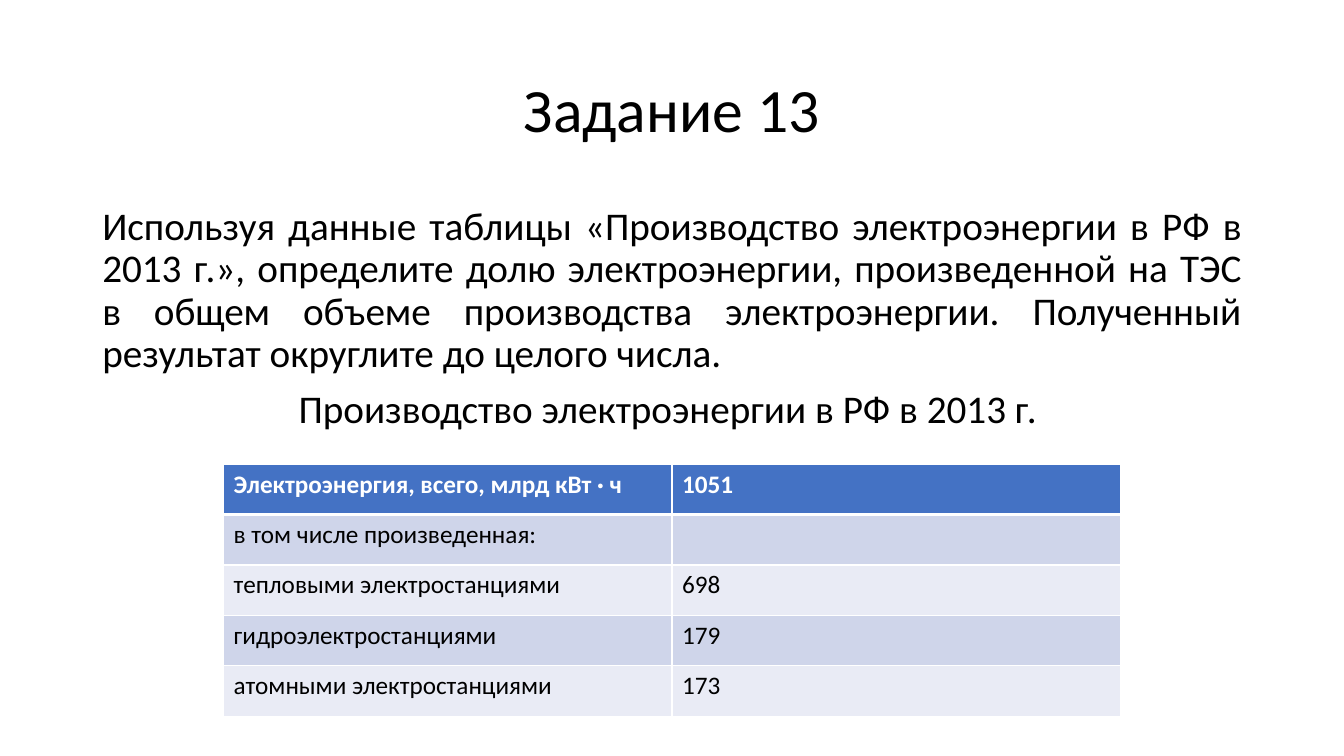
from dataclasses import dataclass

from lxml.etree import SubElement
from pptx import Presentation
from pptx.dml.color import RGBColor
from pptx.enum.text import MSO_ANCHOR, PP_ALIGN
from pptx.oxml.ns import qn
from pptx.util import Emu, Pt


@dataclass(frozen=True)
class Theme:
    font: str = "Calibri"
    ink: str = "000000"
    paper: str = "FFFFFF"
    header: str = "4472C4"
    odd_row: str = "CFD5EA"
    even_row: str = "E9EBF5"
    title_size: int = 44
    body_size: int = 28
    table_size: int = 18


theme = Theme()
PX = 9525


def write(paragraph, text, size, color=theme.ink, bold=False,
          align=PP_ALIGN.LEFT, line=1.0, before=0):
    paragraph.alignment = align
    paragraph.line_spacing = line
    paragraph.space_before = Pt(before)
    run = paragraph.add_run()
    run.text = text
    run.font.name = theme.font
    run.font.size = Pt(size)
    run.font.bold = bold
    run.font.color.rgb = RGBColor.from_string(color)


def add_border(cell, side, points):
    border = SubElement(cell._tc.get_or_add_tcPr(), qn(f"a:{side}"), w=str(Pt(points)))
    fill = SubElement(border, qn("a:solidFill"))
    SubElement(fill, qn("a:srgbClr"), val=theme.paper)


deck = Presentation()
deck.slide_width, deck.slide_height = Emu(1280 * PX), Emu(720 * PX)
slide = deck.slides.add_slide(deck.slide_layouts[6])

title = slide.shapes.add_textbox(88 * PX, 38 * PX, 1104 * PX, 139 * PX).text_frame
title.word_wrap = True
title.vertical_anchor = MSO_ANCHOR.MIDDLE
write(title.paragraphs[0], "Задание 13", theme.title_size, align=PP_ALIGN.CENTER, line=0.9)

task = slide.shapes.add_textbox(88 * PX, 192 * PX, 1104 * PX, 457 * PX).text_frame
task.word_wrap = True
write(task.paragraphs[0],
      "Используя данные таблицы «Производство электроэнергии в РФ в 2013 г.», "
      "определите долю электроэнергии, произведенной на ТЭС в общем объеме "
      "производства электроэнергии. Полученный результат округлите до целого числа.",
      theme.body_size, align=PP_ALIGN.JUSTIFY, line=0.9, before=10)
write(task.add_paragraph(), "Производство электроэнергии в РФ в 2013 г. ",
      theme.body_size, align=PP_ALIGN.CENTER, line=0.9, before=10)

production = [
    ("Электроэнергия, всего, млрд кВт · ч", "1051"),
    ("в том числе произведенная:", ""),
    ("тепловыми электростанциями", "698"),
    ("гидроэлектростанциями", "179"),
    ("атомными электростанциями", "173"),
]
table = slide.shapes.add_table(len(production), 2, 213 * PX, 442 * PX,
                               854 * PX, 240 * PX).table
for row, entries in enumerate(production):
    is_header = row == 0
    if is_header:
        row_color = theme.header
    else:
        row_color = theme.odd_row if row % 2 else theme.even_row
    for column, entry in enumerate(entries):
        cell = table.cell(row, column)
        for side in ("lnL", "lnR", "lnT", "lnB"):
            under_header = (row, side) in ((0, "lnB"), (1, "lnT"))
            add_border(cell, side, 3 if under_header else 1)
        cell.fill.solid()
        cell.fill.fore_color.rgb = RGBColor.from_string(row_color)
        if entry:
            write(cell.text_frame.paragraphs[0], entry, theme.table_size,
                  color=theme.paper if is_header else theme.ink, bold=is_header)

deck.save("out.pptx")
